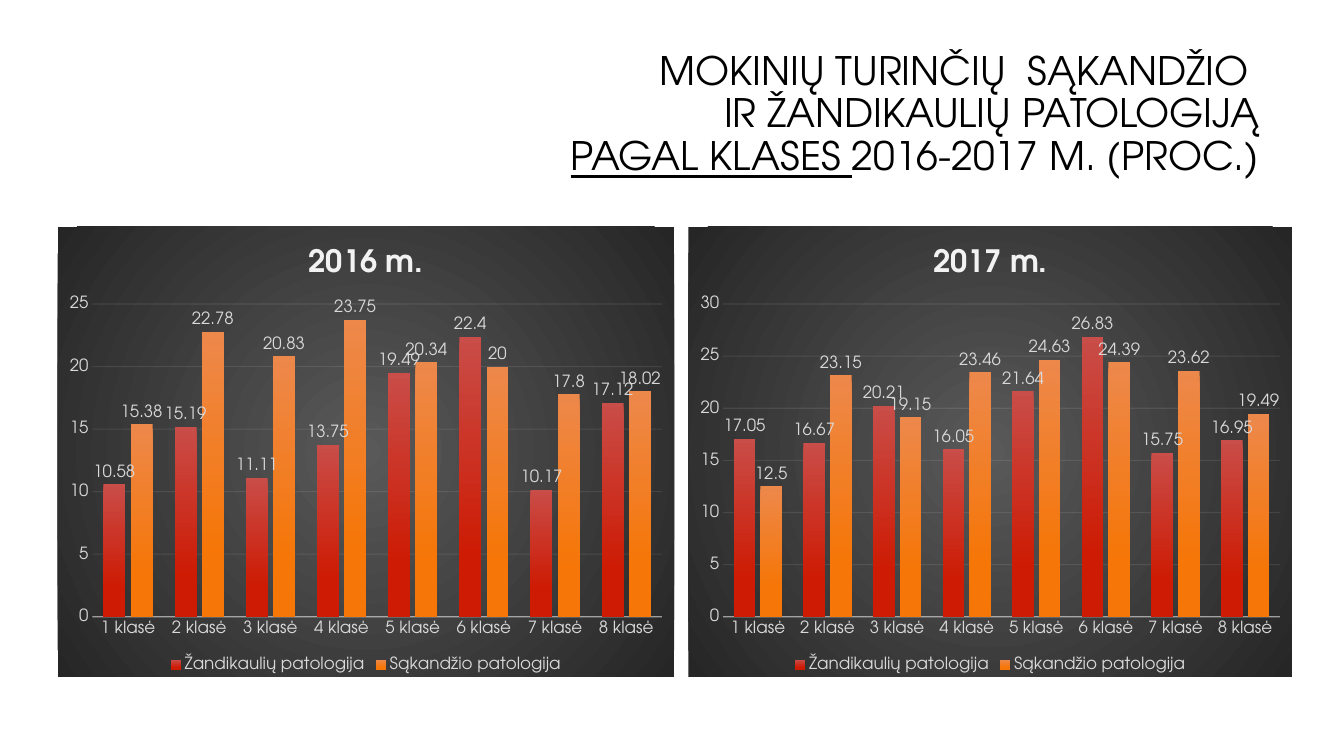
import dataclasses

import lxml.etree
import pptx
import pptx.chart.data
import pptx.dml.color
import pptx.enum.chart
import pptx.enum.dml
import pptx.enum.text
import pptx.oxml
import pptx.oxml.ns
import pptx.util

Cm = pptx.util.Cm
Pt = pptx.util.Pt

FACE = "TeX Gyre Adventor"
HUES = {
    "ink": "000000",
    "label": "D9D9D9",
    "line": "F2F2F2",
    "mid": "595959",
    "edge": "262626",
    "rose": "C94D48",
    "red": "CD1B04",
    "peach": "ED884B",
    "orange": "F67607",
}
GRADES = [f"{n} klasė" for n in range(1, 9)]
TOP, HEIGHT = 5.72, 11.33


@dataclasses.dataclass
class Series:
    name: str
    light: str
    deep: str


@dataclasses.dataclass
class Panel:
    title: str
    left: float
    width: float
    peak: int
    values: list[list[float]]


SERIES = [
    Series("Žandikaulių patologija", "rose", "red"),
    Series("Sąkandžio patologija", "peach", "orange"),
]
PANELS = [
    Panel("2016 m.", 1.45, 15.54, 25, [
        [10.58, 15.19, 11.11, 13.75, 19.49, 22.4, 10.17, 17.12],
        [15.38, 22.78, 20.83, 23.75, 20.34, 20, 17.8, 18.02],
    ]),
    Panel("2017 m.", 17.35, 15.21, 30, [
        [17.05, 16.67, 20.21, 16.05, 21.64, 26.83, 15.75, 16.95],
        [12.5, 23.15, 19.15, 23.46, 24.63, 24.39, 23.62, 19.49],
    ]),
]


def color(hue: str) -> pptx.dml.color.RGBColor:
    return pptx.dml.color.RGBColor.from_string(HUES[hue])


def style(font, size: float, hue: str, bold: bool = False, under: bool = False) -> None:
    font.name, font.size = FACE, Pt(size)
    font.bold, font.underline = bold, under
    font.color.rgb = color(hue)


def write(par, text: str, **form) -> None:
    """Add text to a paragraph, with a line break at each newline."""
    for index, line in enumerate(text.split("\n")):
        if index:
            par.add_line_break()
        if line:
            run = par.add_run()
            run.text = line
            style(run.font, **form)


def stroke(line, width: float, alpha: int) -> None:
    line.width = Pt(width)
    line.fill.solid()
    line.fill.fore_color.rgb = color("line")
    tag = pptx.oxml.ns.qn("a:srgbClr")
    for node in line._get_or_add_ln().iter(tag):
        lxml.etree.SubElement(node, pptx.oxml.ns.qn("a:alpha"), val=str(alpha * 1000))


def glow(chart) -> None:
    """Fill the chart area with a round gradient."""
    area = pptx.oxml.parse_xml(
        f'<c:spPr {pptx.oxml.ns.nsdecls("c", "a")}><a:gradFill><a:gsLst>'
        f'<a:gs pos="0"><a:srgbClr val="{HUES["mid"]}"/></a:gs>'
        f'<a:gs pos="100000"><a:srgbClr val="{HUES["edge"]}"/></a:gs></a:gsLst>'
        '<a:path path="circle"><a:fillToRect l="50000" t="50000" r="50000" b="50000"/>'
        '</a:path></a:gradFill><a:ln><a:noFill/></a:ln></c:spPr>'
    )
    chart._chartSpace.find(pptx.oxml.ns.qn("c:chart")).addnext(area)


def paint(bars, series: Series) -> None:
    bars.invert_if_negative = False
    fill = bars.format.fill
    fill.gradient()
    fill.gradient_angle = 270
    for stop, spot, hue in zip(fill.gradient_stops, (0, 0.78), (series.light, series.deep)):
        stop.position = spot
        stop.color.rgb = color(hue)
    labels = bars.data_labels
    labels.show_value = True
    labels.position = pptx.enum.chart.XL_LABEL_POSITION.OUTSIDE_END
    style(labels.font, 12, "label")


def draw(slide, panel: Panel) -> None:
    data = pptx.chart.data.CategoryChartData()
    data.categories = GRADES
    for series, values in zip(SERIES, panel.values):
        data.add_series(series.name, values)
    chart = slide.shapes.add_chart(
        pptx.enum.chart.XL_CHART_TYPE.COLUMN_CLUSTERED,
        Cm(panel.left), Cm(TOP), Cm(panel.width), Cm(HEIGHT), data,
    ).chart
    style(chart.font, 10, "ink")
    glow(chart)

    # Title and legend
    chart.has_title = True
    chart.chart_title.include_in_layout = False
    write(chart.chart_title.text_frame.paragraphs[0], panel.title,
          size=22, hue="line", bold=True)
    chart.has_legend = True
    chart.legend.position = pptx.enum.chart.XL_LEGEND_POSITION.BOTTOM
    chart.legend.include_in_layout = False
    style(chart.legend.font, 12, "label")

    # Axes
    for axis in (chart.category_axis, chart.value_axis):
        axis.major_tick_mark = pptx.enum.chart.XL_TICK_MARK.NONE
        axis.minor_tick_mark = pptx.enum.chart.XL_TICK_MARK.NONE
        style(axis.tick_labels.font, 12, "label")
    stroke(chart.category_axis.format.line, 1, 54)
    scale = chart.value_axis
    scale.minimum_scale, scale.maximum_scale, scale.major_unit = 0, panel.peak, 5
    scale.format.line.fill.background()
    stroke(scale.major_gridlines.format.line, 0.75, 10)

    # Bars
    plot = chart.plots[0]
    plot.gap_width, plot.overlap = 100, -24
    plot.vary_by_categories = False
    for bars, series in zip(plot.series, SERIES):
        paint(bars, series)


def head(slide) -> None:
    frame = slide.shapes.add_textbox(Cm(8.05), Cm(1.12), Cm(23.93), Cm(3.56)).text_frame
    frame.word_wrap = True
    frame.vertical_anchor = pptx.enum.text.MSO_ANCHOR.MIDDLE
    par = frame.paragraphs[0]
    par.alignment = pptx.enum.text.PP_ALIGN.RIGHT
    par.line_spacing = 0.9
    write(par, "MOKINIŲ TURINČIŲ  SĄKANDŽIO \nIR ŽANDIKAULIŲ PATOLOGIJĄ\n", size=28, hue="ink")
    write(par, "PAGAL KLASES ", size=28, hue="ink", under=True)
    write(par, "2016-2017 M. (PROC.)", size=28, hue="ink")


def main() -> None:
    deck = pptx.Presentation()
    deck.slide_width, deck.slide_height = Cm(33.87), Cm(19.05)
    slide = deck.slides.add_slide(deck.slide_layouts[6])
    head(slide)
    for panel in PANELS:
        draw(slide, panel)
    deck.save("out.pptx")


if __name__ == "__main__":
    main()
